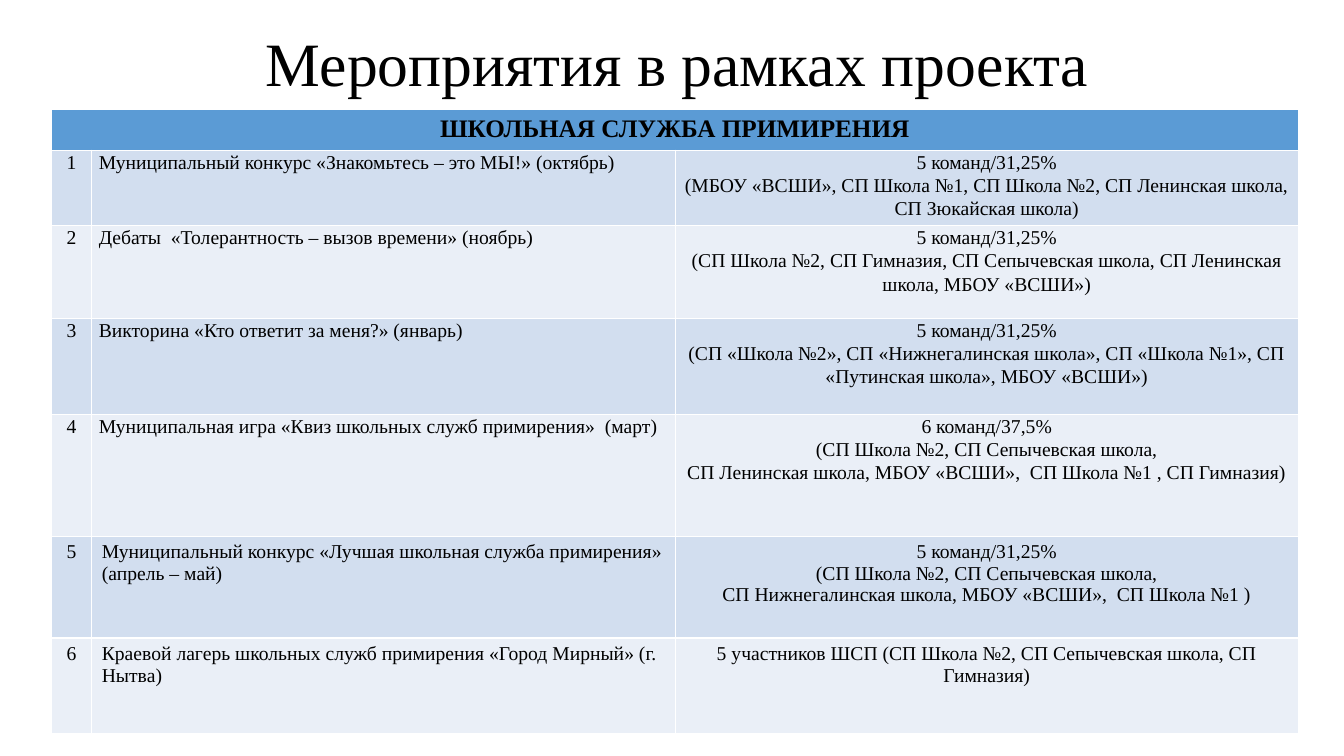
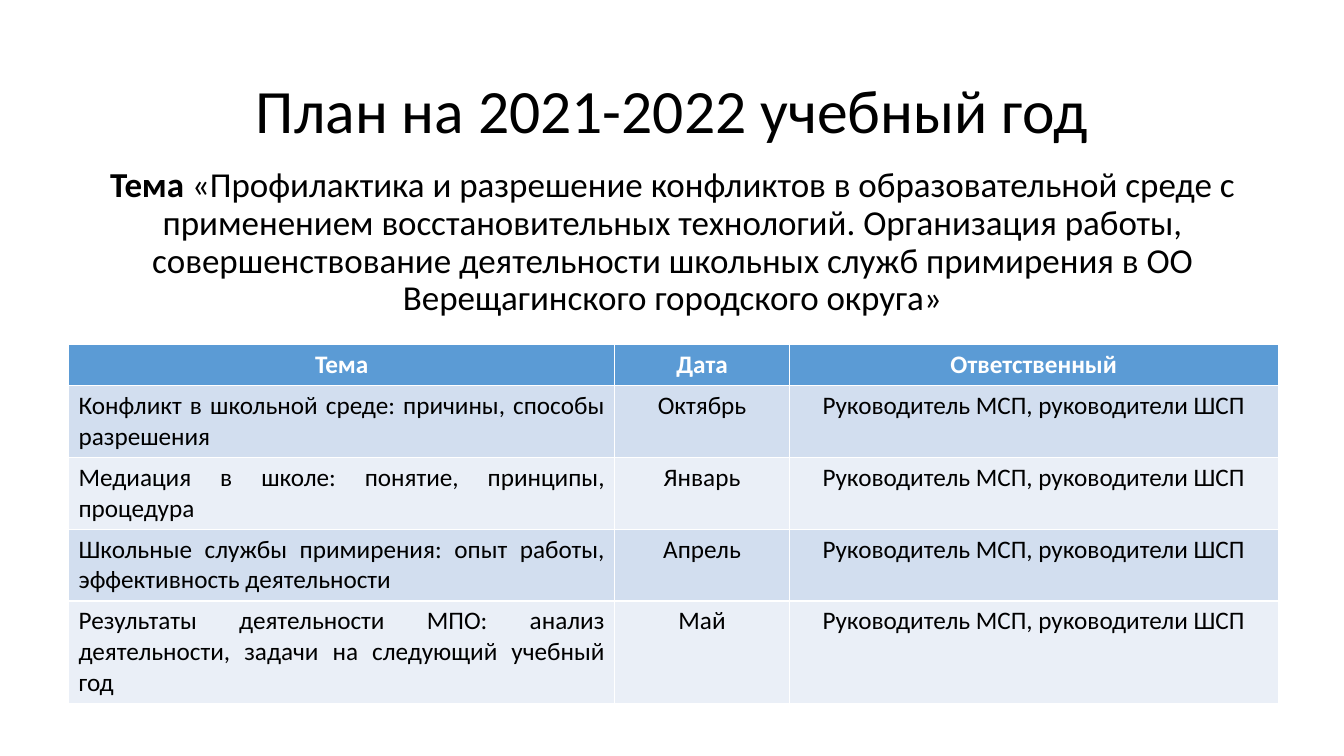
"""Build two slides: project events and the plan for the school year."""
from pptx import Presentation
from pptx.dml.color import RGBColor
from pptx.enum import text
from pptx.util import Inches, Pt

CENTER, LEFT, JUSTIFY = text.PP_ALIGN.CENTER, text.PP_ALIGN.LEFT, text.PP_ALIGN.JUSTIFY
BLACK, WHITE, HEADER, BANDS = "000000", "FFFFFF", "5B9BD5", ("D2DEEF", "EAEFF7")
SERIF, SANS = "Times New Roman", "Calibri"
TITLE_SIZE, TITLE_SPACING = 44, 0.9

deck = Presentation()
deck.slide_width, deck.slide_height = Inches(13.333), Inches(7.5)
COL, ROW = deck.slide_width / 100, deck.slide_height / 100


def paint(target, color):
    target.rgb = RGBColor.from_string(color)


def write(frame, lines, font, size, align=CENTER, color=BLACK, bold=False, spacing=1.0):
    frame.word_wrap = True
    frame.text = "\n".join(lines)
    for paragraph in frame.paragraphs:
        paragraph.alignment, paragraph.line_spacing = align, spacing
        paragraph.font.name, paragraph.font.size = font, Pt(size)
        paragraph.font.bold = bold
        paint(paragraph.font.color, color)


events = [
    ["Муниципальный конкурс «Знакомьтесь – это МЫ!» (октябрь)",
     "5 команд/31,25%\n(МБОУ «ВСШИ», СП Школа №1, СП Школа №2, СП Ленинская школа, "
     "СП Зюкайская школа)"],
    ["Дебаты  «Толерантность – вызов времени» (ноябрь)",
     "5 команд/31,25%\n(СП Школа №2, СП Гимназия, СП Сепычевская школа, "
     "СП Ленинская школа, МБОУ «ВСШИ»)"],
    ["Викторина «Кто ответит за меня?» (январь)",
     "5 команд/31,25%\n(СП «Школа №2», СП «Нижнегалинская школа», СП «Школа №1», "
     "СП «Путинская школа», МБОУ «ВСШИ»)"],
    ["Муниципальная игра «Квиз школьных служб примирения»  (март)",
     "6 команд/37,5%\n(СП Школа №2, СП Сепычевская школа,\n"
     "СП Ленинская школа, МБОУ «ВСШИ»,  СП Школа №1 , СП Гимназия)"],
    ["Муниципальный конкурс «Лучшая школьная служба примирения» (апрель – май)",
     "5 команд/31,25%\n(СП Школа №2, СП Сепычевская школа,\n"
     "СП Нижнегалинская школа, МБОУ «ВСШИ»,  СП Школа №1 )"],
    ["Краевой лагерь школьных служб примирения «Город Мирный» (г. Нытва)",
     "5 участников ШСП (СП Школа №2, СП Сепычевская школа, СП Гимназия)"],
]
meetings = [
    ["Конфликт в школьной среде: причины, способы разрешения", "Октябрь"],
    ["Медиация в школе: понятие, принципы, процедура", "Январь"],
    ["Школьные службы примирения: опыт работы, эффективность деятельности", "Апрель"],
    ["Результаты деятельности МПО: анализ деятельности, задачи на следующий учебный год", "Май"],
]
pages = [
    dict(title="Мероприятия в рамках проекта", title_box=(7.28, 2.53, 86.25, 12.53),
         font=SERIF, size=14, header_color=BLACK, corner=(3.83, 14.53),
         columns=[3, 43.42, 46.35], heights=[5.2, 9.6, 12.27, 12.67, 16.13, 13.47, 12.67],
         aligns=[CENTER, LEFT, CENTER], tight_rows=4,
         header=["ШКОЛЬНАЯ СЛУЖБА ПРИМИРЕНИЯ"],
         body=[[str(number), *event] for number, event in enumerate(events, 1)]),
    dict(title="План на 2021-2022 учебный год", title_box=(6.9, 5.33, 86.25, 19.33),
         font=SANS, size=18, header_color=WHITE, corner=(5.1, 45.6),
         columns=[40.65, 12.98, 36.38], heights=[5.4, 9.5, 9.5, 9.5, 13.6],
         aligns=[JUSTIFY, CENTER, CENTER], tight_rows=0,
         header=["Тема", "Дата", "Ответственный"],
         body=[[*meeting, "Руководитель МСП, руководители ШСП"] for meeting in meetings]),
]

for page in pages:
    slide = deck.slides.add_slide(deck.slide_layouts[6])
    left, top, width, height = page["title_box"]
    title = slide.shapes.add_textbox(
        int(left * COL), int(top * ROW), int(width * COL), int(height * ROW)).text_frame
    write(title, [page["title"]], page["font"], TITLE_SIZE, spacing=TITLE_SPACING)
    title.vertical_anchor = text.MSO_ANCHOR.MIDDLE

    columns, heights = page["columns"], page["heights"]
    left, top = page["corner"]
    schedule = slide.shapes.add_table(
        len(heights), len(columns), int(left * COL), int(top * ROW),
        int(sum(columns) * COL), int(sum(heights) * ROW)).table
    for column, share in zip(schedule.columns, columns):
        column.width = int(share * COL)
    for row, share in zip(schedule.rows, heights):
        row.height = int(share * ROW)
    if len(page["header"]) == 1:
        schedule.cell(0, 0).merge(schedule.cell(0, len(columns) - 1))

    for r, entries in enumerate([page["header"], *page["body"]]):
        tight = 0 < r <= page["tight_rows"]
        for c, entry in enumerate(entries):
            cell = schedule.cell(r, c)
            cell.fill.solid()
            paint(cell.fill.fore_color, BANDS[(r - 1) % 2] if r else HEADER)
            if tight:
                cell.margin_left = cell.margin_right = Inches(0.07)
                cell.margin_top = cell.margin_bottom = 0
            if r:
                write(cell.text_frame, entry.split("\n"), page["font"], page["size"],
                      page["aligns"][c], spacing=1.07 if tight else 1.0)
            else:
                write(cell.text_frame, [entry], page["font"], 18,
                      color=page["header_color"], bold=True)

theme = slide.shapes.add_textbox(
    int(6.9 * COL), int(21.47 * ROW), int(86.25 * COL), int(68.53 * ROW)).text_frame
write(theme, ["Тема"], SANS, 25, spacing=0.9)
statement = theme.paragraphs[0]
statement.space_before = Pt(10)
statement.runs[0].font.bold = True
statement.add_run().text = (
    " «Профилактика и разрешение конфликтов в образовательной среде с применением "
    "восстановительных технологий. Организация работы, совершенствование деятельности "
    "школьных служб примирения в ОО Верещагинского городского округа»")

deck.save("out.pptx")
